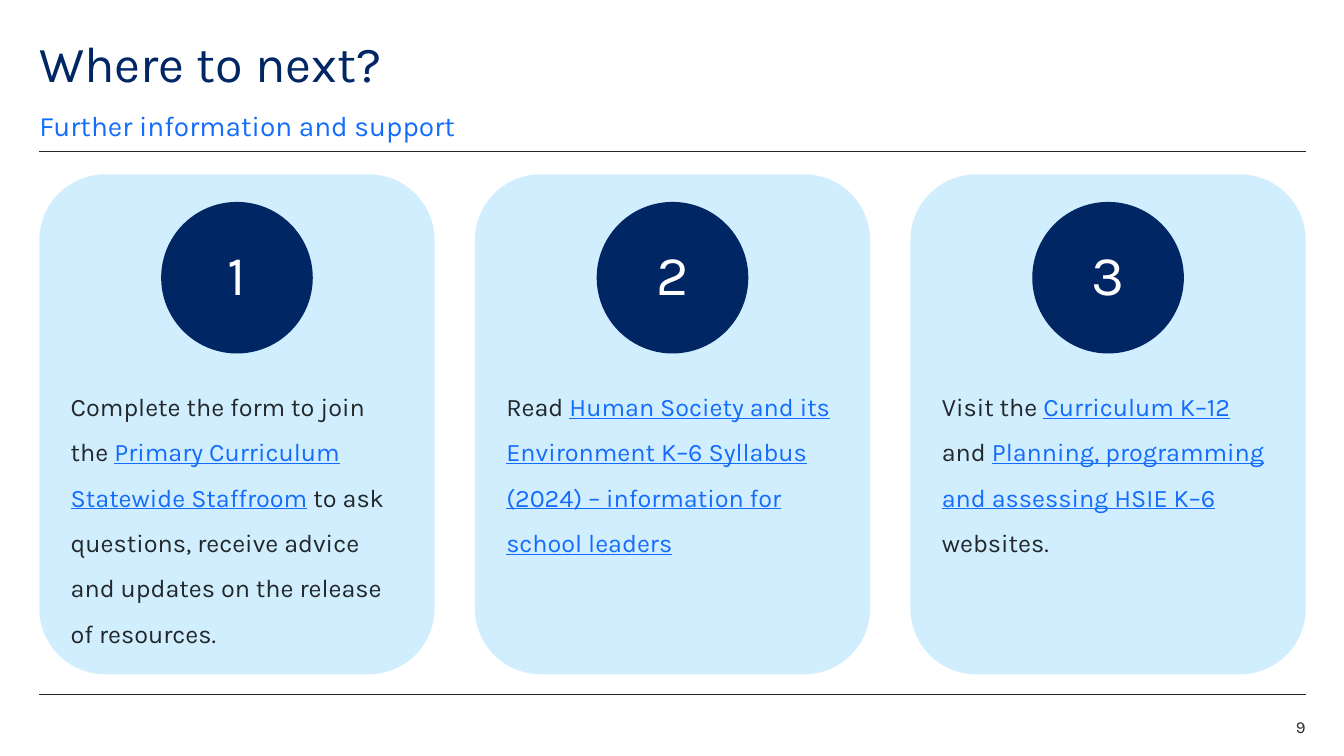
from lxml.etree import SubElement
from pptx import Presentation
from pptx.dml.color import RGBColor
from pptx.enum.shapes import MSO_CONNECTOR as Connector, MSO_SHAPE as Shape
from pptx.enum.text import MSO_ANCHOR as Anchor, PP_ALIGN as Align
from pptx.oxml.ns import qn
from pptx.util import Inches, Pt

COLOURS = {"navy": "002664", "blue": "146CFD", "ink": "22272B",
           "sky": "CBEDFD", "white": "FFFFFF"}
FONT = "Karla"

# Grid: three equal columns between the side margins
LEFT, RIGHT, GAP = 0.39, 12.95, 0.4
WIDTH = RIGHT - LEFT
COLUMN = (WIDTH - 2 * GAP) / 3
CARD_TOP, CARD_HEIGHT = 1.73, 4.96
CIRCLE_TOP, CIRCLE = 2.01, 1.49


def colour(name):
    return RGBColor.from_string(COLOURS[name])


def write(shape, spans, size, margins=(0, 0, 0, 0), anchor=Anchor.TOP, **layout):
    """Fill a shape with one paragraph of (text, colour, underline) spans."""
    frame = shape.text_frame
    left, top, right, bottom = map(Inches, margins)
    frame_format = {"word_wrap": True, "vertical_anchor": anchor,
                    "margin_left": left, "margin_top": top,
                    "margin_right": right, "margin_bottom": bottom}
    para = frame.paragraphs[0]
    for target, values in ((frame, frame_format), (para, layout)):
        for key, value in values.items():
            setattr(target, key, value)
    for text, ink, underline in spans:
        span = para.add_run()
        span.text = text
        span_format = {"name": FONT, "size": Pt(size), "underline": underline}
        for key, value in span_format.items():
            setattr(span.font, key, value)
        span.font.color.rgb = colour(ink)


deck = Presentation()
deck.slide_width, deck.slide_height = Inches(13.33), Inches(7.5)
page = deck.slides.add_slide(deck.slide_layouts[6])
shapes = page.shapes

# Rules under the heading and above the footer
for y in (1.5, 6.89):
    rule = shapes.add_connector(Connector.STRAIGHT, Inches(LEFT), Inches(y),
                                Inches(RIGHT), Inches(y))
    rule.line.color.rgb = colour("ink")
    rule.line.width = Pt(0.5)
    SubElement(rule._element.spPr, qn("a:effectLst"))

# Heading, subheading and page number
labels = [
    ("Where to next?", (LEFT, 0.39, 11.02, 0.6), 36, "navy",
     Anchor.TOP, Align.LEFT, 0.9),
    ("Further information and support", (LEFT, 1.07, 11.02, 0.34), 20, "blue",
     Anchor.BOTTOM, Align.LEFT, 1.4),
    ("9", (RIGHT - 0.79, 7.13, 0.79, 0.2), 12, "ink",
     Anchor.TOP, Align.RIGHT, 0.9),
]
for text, place, size, ink, anchor, align, spacing in labels:
    box = shapes.add_textbox(*map(Inches, place))
    write(box, [(text, ink, False)], size, anchor=anchor,
          alignment=align, line_spacing=spacing)

# Numbered cards
cards = [
    [("Complete the form to join the ", "ink", False),
     ("Primary Curriculum Statewide Staffroom", "blue", True),
     (" to ask questions, receive advice and updates on the release of resources.",
      "ink", False)],
    [("Read ", "ink", False),
     ("Human Society and its Environment K–6 Syllabus (2024) – "
      "information for school leaders", "blue", True)],
    [("Visit the ", "ink", False),
     ("Curriculum K–12", "blue", True),
     (" and ", "ink", False),
     ("Planning, programming and assessing HSIE K–6", "blue", True),
     (" websites.", "ink", False)],
]
for index, spans in enumerate(cards):
    x = LEFT + index * (COLUMN + GAP)

    card = shapes.add_shape(Shape.ROUNDED_RECTANGLE, Inches(x), Inches(CARD_TOP),
                            Inches(COLUMN), Inches(CARD_HEIGHT))
    card.shadow.inherit = False
    card.fill.solid()
    card.fill.fore_color.rgb = colour("sky")
    tint = card._element.spPr.find(qn("a:solidFill")).find(qn("a:srgbClr"))
    SubElement(tint, qn("a:alpha"), val="90000")
    card.line.fill.background()
    write(card, spans, 18, margins=(0.12, 1.81, 0.12, 0.47),
          alignment=Align.LEFT, line_spacing=1.5)

    circle = shapes.add_shape(Shape.OVAL, Inches(x + (COLUMN - CIRCLE) / 2),
                              Inches(CIRCLE_TOP), Inches(CIRCLE), Inches(CIRCLE))
    circle.shadow.inherit = False
    circle.fill.solid()
    circle.fill.fore_color.rgb = colour("navy")
    circle.line.color.rgb = colour("navy")
    circle.line.width = Pt(1)
    write(circle, [(str(index + 1), "white", False)], 40, anchor=Anchor.MIDDLE,
          alignment=Align.CENTER, line_spacing=0.9)

deck.save("out.pptx")
